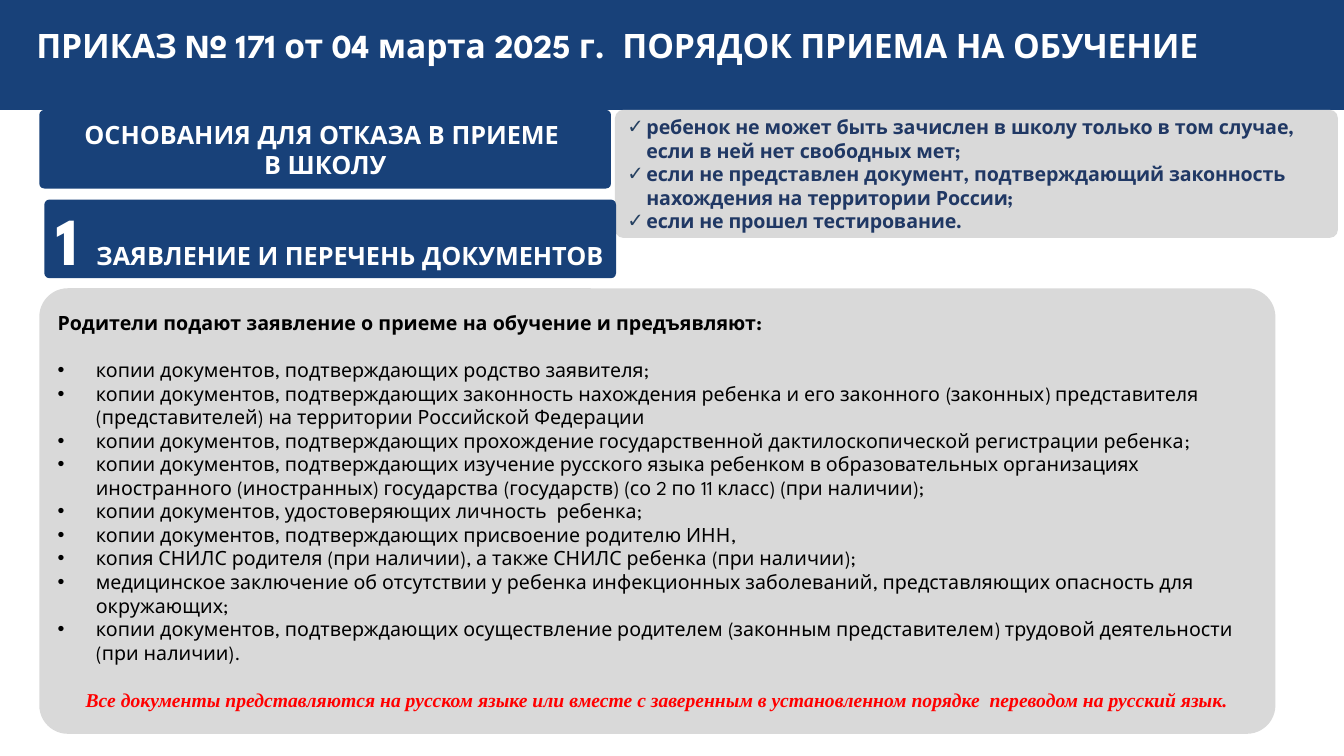
from pptx import Presentation
from pptx.dml.color import RGBColor
from pptx.enum.shapes import MSO_SHAPE
from pptx.enum.text import MSO_ANCHOR, MSO_AUTO_SIZE, PP_ALIGN
from pptx.oxml.ns import qn
from pptx.util import Inches, Pt
from lxml.etree import SubElement

# Content
TITLE = "ПРИКАЗ № 171 от 04 марта 2025 г.  ПОРЯДОК ПРИЕМА НА ОБУЧЕНИЕ"
REFUSAL_HEADING = ["ОСНОВАНИЯ ДЛЯ ОТКАЗА В ПРИЕМЕ ", "В ШКОЛУ"]
DOCUMENTS_NUMBER = "1 "
DOCUMENTS_HEADING = "ЗАЯВЛЕНИЕ И ПЕРЕЧЕНЬ ДОКУМЕНТОВ"
REFUSAL_REASONS = [
    "ребенок не может быть зачислен в школу только в том случае, если в ней нет свободных мет;",
    "если не представлен документ, подтверждающий законность нахождения на территории России;",
    "если не прошел тестирование.",
]
DOCUMENTS_INTRO = "Родители подают заявление о приеме на обучение и предъявляют:"
DOCUMENTS = [
    "копии документов, подтверждающих родство заявителя;",
    "копии документов, подтверждающих законность нахождения ребенка и его законного (законных) "
    "представителя (представителей) на территории Российской Федерации",
    "копии документов, подтверждающих прохождение государственной дактилоскопической "
    "регистрации ребенка;",
    "копии документов, подтверждающих изучение русского языка ребенком в образовательных "
    "организациях иностранного (иностранных) государства (государств) (со 2 по 11 класс) "
    "(при наличии);",
    "копии документов, удостоверяющих личность  ребенка;",
    "копии документов, подтверждающих присвоение родителю ИНН,",
    "копия СНИЛС родителя (при наличии), а также СНИЛС ребенка (при наличии);",
    "медицинское заключение об отсутствии у ребенка инфекционных заболеваний, "
    "представляющих опасность для окружающих;",
    "копии документов, подтверждающих осуществление родителем (законным представителем) "
    "трудовой деятельности (при наличии).",
]
LANGUAGE_NOTE = ("Все документы представляются на русском языке или вместе с заверенным "
                 "в установленном порядке  переводом на русский язык.")

# Look
NAVY, GREY, WHITE = "184179", "D9D9D9", "FFFFFF"
HEADING = {"size": Pt(18), "bold": True, "color": WHITE}
REASON = {"size": Pt(14), "bold": True, "color": "203864"}
BODY = {"size": Pt(14), "bold": False, "color": "000000"}
NOTE = {"size": Pt(14), "bold": True, "italic": True, "color": "FF0000",
        "name": "Times New Roman"}
LINE_GAP = Pt(17)
LEFT, BAND_HEIGHT = 0.39, 1.09
HEADING_SIZE = (5.67, 0.78)


def color(value):
    return RGBColor.from_string(value)


def add_box(kind, left, top, width, height, fill):
    shape = slide.shapes.add_shape(
        kind, Inches(left), Inches(top), Inches(width), Inches(height))
    shape.shadow.inherit = False
    shape.fill.solid()
    shape.fill.fore_color.rgb = color(fill)
    shape.line.fill.background()
    if kind == MSO_SHAPE.ROUNDED_RECTANGLE:
        shape.adjustments[0] = 0.064
    shape.text_frame.word_wrap = True
    shape.text_frame.vertical_anchor = MSO_ANCHOR.MIDDLE
    return shape


def add_text(paragraph, text, style, spacing=None):
    run = paragraph.add_run()
    run.text = text
    for name, value in {"name": "League Spartan", **style}.items():
        if name == "color":
            run.font.color.rgb = color(value)
        else:
            setattr(run.font, name, value)
    if spacing is not None:
        run.font._element.set("spc", str(spacing))


def next_paragraph(frame, alignment=PP_ALIGN.LEFT):
    first = frame.paragraphs[0]
    paragraph = frame.add_paragraph() if first.runs else first
    paragraph.alignment = alignment
    return paragraph


def add_bullet(paragraph, symbol, symbol_color, indent):
    properties = paragraph._p.get_or_add_pPr()
    properties.set("marL", str(Inches(indent)))
    properties.set("indent", str(-Inches(indent)))
    fill = SubElement(properties, qn("a:buClr"))
    SubElement(fill, qn("a:srgbClr")).set("val", symbol_color)
    font = "Wingdings" if symbol == "ü" else "Arial"
    SubElement(properties, qn("a:buFont")).set("typeface", font)
    SubElement(properties, qn("a:buChar")).set("char", symbol)


presentation = Presentation()
presentation.slide_width, presentation.slide_height = Inches(13.33), Inches(7.5)
slide = presentation.slides.add_slide(presentation.slide_layouts[5])

# Title on its band
add_box(MSO_SHAPE.RECTANGLE, 0, 0, 13.33, BAND_HEIGHT, NAVY)
title = slide.shapes.title
title.element.getparent().append(title.element)
title.left, title.top, title.width, title.height = map(Inches, (0.26, 0.2, 12.01, 0.78))
title.text_frame.word_wrap = True
title.text_frame.auto_size = MSO_AUTO_SIZE.NONE
title.text_frame.vertical_anchor = MSO_ANCHOR.TOP
add_text(next_paragraph(title.text_frame), TITLE, {**HEADING, "size": Pt(24)}, -10)

# Reasons for refusal
rounded = MSO_SHAPE.ROUNDED_RECTANGLE
reasons = add_box(rounded, 6.1, BAND_HEIGHT, 7.17, 1.27, GREY).text_frame
for reason in REFUSAL_REASONS:
    paragraph = next_paragraph(reasons)
    add_bullet(paragraph, "✓", "254061", 0.19)
    add_text(paragraph, reason, REASON, -10)

# Section headings
refusal = add_box(rounded, LEFT, BAND_HEIGHT, *HEADING_SIZE, NAVY)
paragraph = next_paragraph(refusal.text_frame, PP_ALIGN.CENTER)
add_text(paragraph, REFUSAL_HEADING[0], HEADING)
paragraph.add_line_break()
add_text(paragraph, REFUSAL_HEADING[1], HEADING)

numbered = add_box(rounded, 0.44, 1.98, *HEADING_SIZE, NAVY)
paragraph = next_paragraph(numbered.text_frame, PP_ALIGN.CENTER)
add_text(paragraph, DOCUMENTS_NUMBER, {**HEADING, "size": Pt(48)})
add_text(paragraph, DOCUMENTS_HEADING, HEADING)

# List of documents
documents = add_box(rounded, LEFT, 2.86, 12.26, 4.42, GREY).text_frame
paragraph = next_paragraph(documents)
paragraph.space_after = LINE_GAP
add_text(paragraph, DOCUMENTS_INTRO, {**BODY, "bold": True})
for document in DOCUMENTS:
    paragraph = next_paragraph(documents)
    add_bullet(paragraph, "•", "000000", 0.38)
    add_text(paragraph, document, BODY)
paragraph = next_paragraph(documents, PP_ALIGN.CENTER)
paragraph.space_before = LINE_GAP
add_text(paragraph, LANGUAGE_NOTE, NOTE)

presentation.save("out.pptx")
